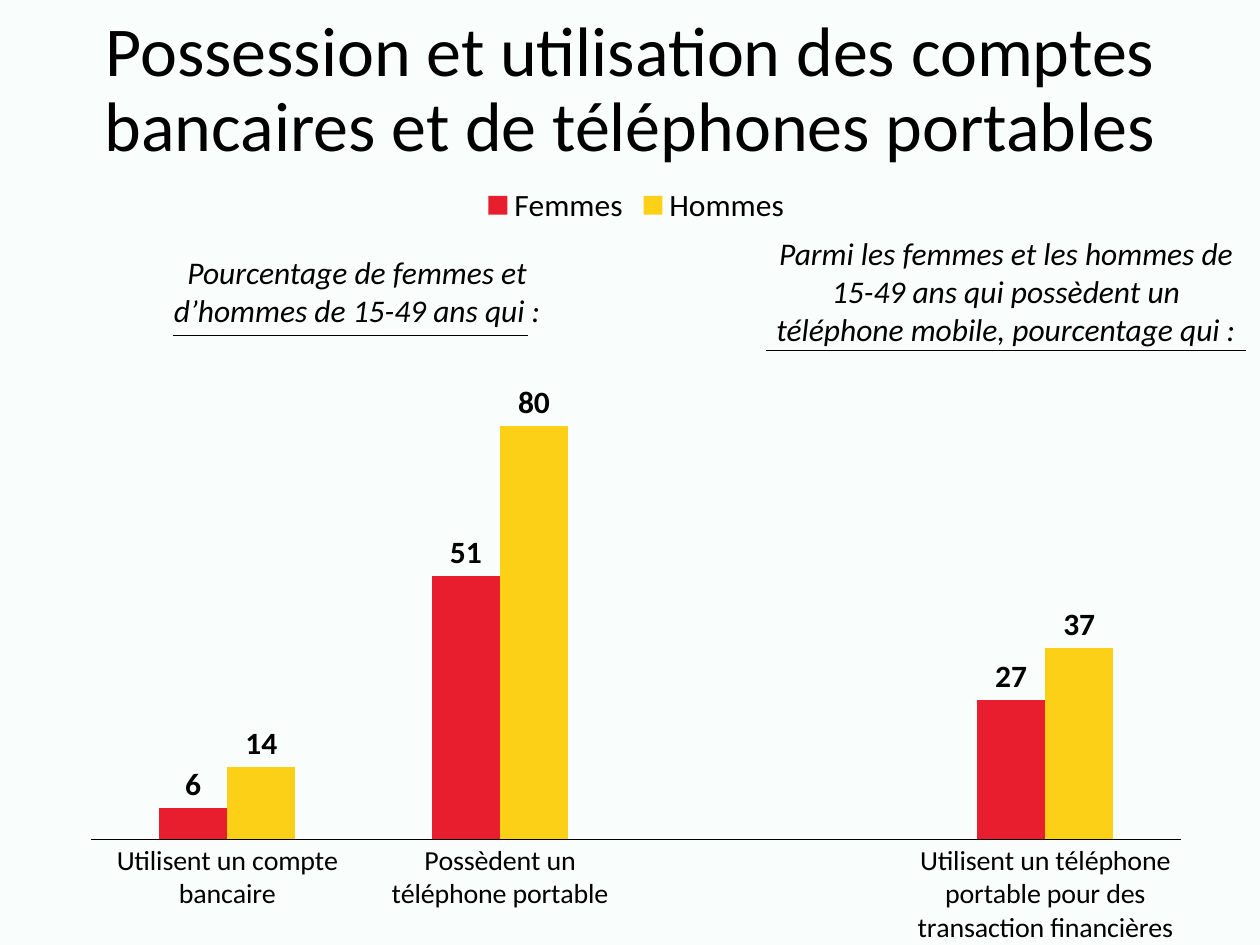
from lxml import etree
from pptx import Presentation
from pptx import util as u
from pptx.chart.data import CategoryChartData
from pptx.dml.color import RGBColor
from pptx.enum import chart as ch, shapes, text
from pptx.oxml import parse_xml
from pptx.oxml.ns import qn

INK = {"back": "F9FEFC", "text": "000000", "Femmes": "E81D2E", "Hommes": "FBD017"}
FACE = "Calibri"


def style(font, size, bold=False, italic=False):
    font.name, font.size = FACE, u.Pt(size)
    font.bold, font.italic = bold, italic
    font.color.rgb = RGBColor.from_string(INK["text"])


def write(words, box, size=18, italic=False, anchor=text.MSO_ANCHOR.TOP, space=None):
    frame = slide.shapes.add_textbox(*map(u.Inches, box)).text_frame
    frame.word_wrap = True
    frame.vertical_anchor = anchor
    para = frame.paragraphs[0]
    para.alignment = text.PP_ALIGN.CENTER
    para.line_spacing = space
    run = para.add_run()
    run.text = words
    style(run.font, size, italic=italic)


deck = Presentation()
deck.slide_width, deck.slide_height = u.Inches(10), u.Inches(7.5)
slide = deck.slides.add_slide(deck.slide_layouts[6])
fill = slide.background.fill
fill.solid()
fill.fore_color.rgb = RGBColor.from_string(INK["back"])

# Title
write("Possession et utilisation des comptes bancaires et de téléphones portables",
      (0, 0, 10, 1.45), size=40, anchor=text.MSO_ANCHOR.MIDDLE, space=0.9)

# Chart
data = CategoryChartData()
data.categories = ["Utilisent un compte bancaire", "Possèdent un téléphone portable", "",
                   "Utilisent un téléphone portable pour des transaction financières"]
data.add_series("Femmes", (6, 51, None, 27))
data.add_series("Hommes", (14, 80, None, 37))
chart = slide.shapes.add_chart(
    ch.XL_CHART_TYPE.COLUMN_CLUSTERED,
    *map(u.Inches, (0.57, 1.36, 8.96, 6.14)), data).chart
style(chart.font, 10)
chart.has_title = False
chart.has_legend = True
chart.legend.position = ch.XL_LEGEND_POSITION.TOP
chart.legend.include_in_layout = False
style(chart.legend.font, 18)

# Axes
axis = chart.category_axis
axis.major_tick_mark = axis.minor_tick_mark = ch.XL_TICK_MARK.NONE
style(axis.tick_labels.font, 16)
axis.format.line.color.rgb = RGBColor.from_string(INK["text"])
axis.format.line.width = u.Pt(0.75)
scale = chart.value_axis
scale.minimum_scale, scale.maximum_scale = 0, 100
scale.has_major_gridlines = False
scale.visible = False

# Bars and their values
plot = chart.plots[0]
plot.gap_width, plot.overlap = 200, 0
plot.vary_by_categories = False
for bars in plot.series:
    bars.format.fill.solid()
    bars.format.fill.fore_color.rgb = RGBColor.from_string(INK[bars.name])
    labels = bars.data_labels
    labels.show_value = True
    labels.position = ch.XL_LABEL_POSITION.OUTSIDE_END
    style(labels.font, 18, bold=True)

# Plot area place
area = chart.plots[0]._element.getparent()
for old in area.findall(qn("c:layout")):
    area.remove(old)
layout = parse_xml('<c:layout xmlns:c="http://schemas.openxmlformats.org/drawingml/2006/chart"/>')
manual = etree.SubElement(layout, qn("c:manualLayout"))
for tag, val in (("layoutTarget", "inner"), ("xMode", "edge"), ("yMode", "edge"),
                 ("x", 0.017), ("y", 0.199), ("w", 0.966), ("h", 0.68)):
    etree.SubElement(manual, qn("c:" + tag)).set("val", str(val))
area.insert(0, layout)

# Group headings, each with a rule below
heads = [
    ("Pourcentage de femmes et d’hommes de 15-49 ans qui :",
     (1.12, 1.96, 3.43, 0.71), (1.37, 4.19, 2.66)),
    ("Parmi les femmes et les hommes de 15-49 ans qui possèdent un "
     "téléphone mobile, pourcentage qui :",
     (6.06, 1.81, 3.85, 1.01), (6.08, 9.89, 2.78)),
]
for words, box, (left, right, y) in heads:
    write(words, box, italic=True)
    rule = slide.shapes.add_connector(
        shapes.MSO_CONNECTOR.STRAIGHT, *map(u.Inches, (left, y, right, y)))
    rule.line.color.rgb = RGBColor.from_string(INK["text"])
    rule.line.width = u.Pt(0.5)
    etree.SubElement(rule._element.spPr, qn("a:effectLst"))

deck.save("out.pptx")
